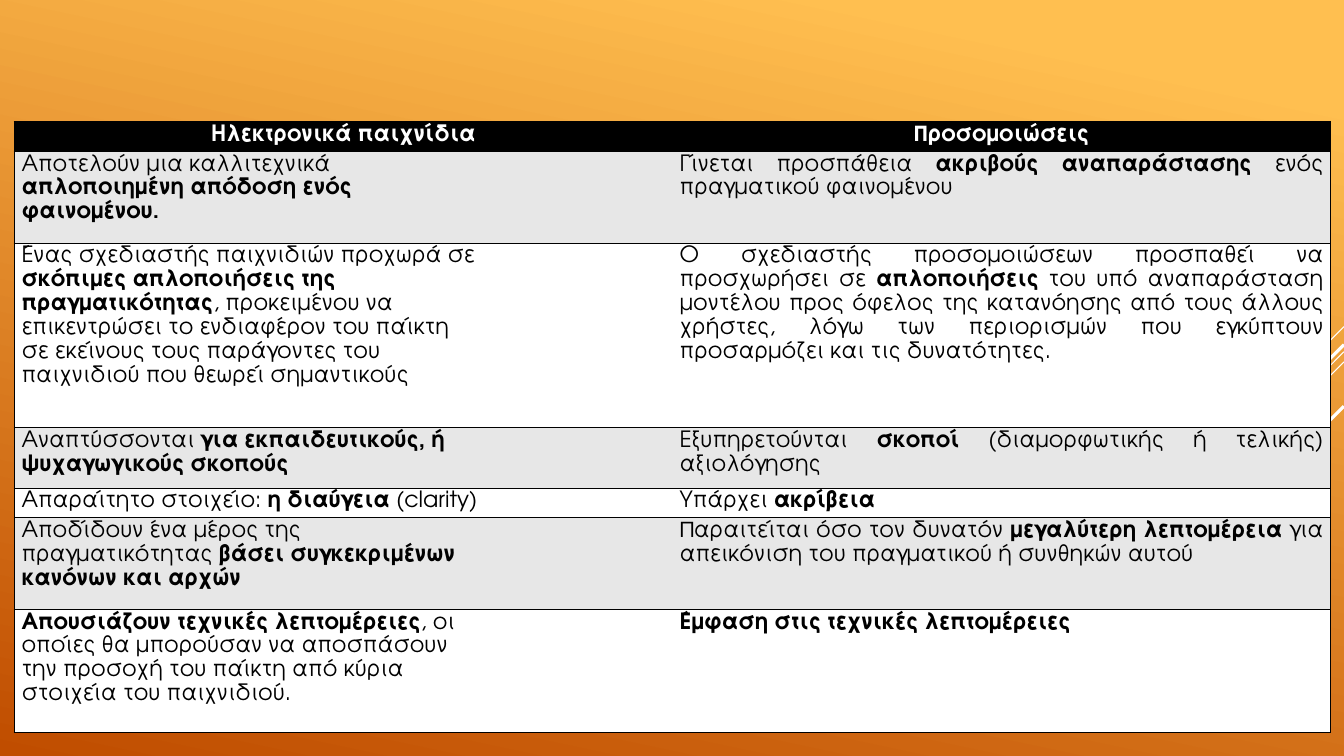
from lxml.etree import SubElement
from pptx import Presentation
from pptx.dml.color import RGBColor
from pptx.enum.shapes import MSO_CONNECTOR
from pptx.enum.text import PP_ALIGN
from pptx.oxml import parse_xml
from pptx.oxml.ns import nsdecls, qn
from pptx.util import Pt

COLORS = {"black": "000000", "white": "FFFFFF", "gray": "E7E7E7",
          "amber": "FFBF50", "rust": "C04D00"}

# Start height at the right edge, diagonal reach, line width
RAYS = [(233.28, 72, 0.75), (251.28, 234.72, 0.75), (258.48, 149, 0.75),
        (246.24, 137.52, 2.25), (290.16, 100, 2.25)]

HEIGHTS = [21, 65.6, 131.8, 43.2, 21, 65.6, 87.8]

# Each row: games, simulations; ** switches bold, a new line starts a paragraph
ROWS = [
    ("**Ηλεκτρονικά παιχνίδια**", "**Προσομοιώσεις**"),
    ("Αποτελούν μια καλλιτεχνικά\n**απλοποιημένη απόδοση ενός**\n**φαινομένου.**",
     "Γίνεται προσπάθεια **ακριβούς αναπαράστασης **ενός πραγματικού φαινομένου"),
    ("Ένας σχεδιαστής παιχνιδιών προχωρά σε\n**σκόπιμες απλοποιήσεις της**\n"
     "**πραγματικότητας**, προκειμένου να\nεπικεντρώσει το ενδιαφέρον του παίκτη\n"
     "σε εκείνους τους παράγοντες του\nπαιχνιδιού που θεωρεί σημαντικούς",
     "Ο σχεδιαστής προσομοιώσεων προσπαθεί να προσχωρήσει σε **απλοποιήσεις** "
     "του υπό αναπαράσταση μοντέλου προς όφελος της κατανόησης από τους άλλους "
     "χρήστες, λόγω των περιορισμών που εγκύπτουν προσαρμόζει και τις δυνατότητες."),
    ("Αναπτύσσονται **για εκπαιδευτικούς, ή**\n**ψυχαγωγικούς σκοπούς**",
     "Εξυπηρετούνται **σκοποί** (διαμορφωτικής ή τελικής) αξιολόγησης"),
    ("Απαραίτητο στοιχείο: **η διαύγεια **(clarity)", "Υπάρχει **ακρίβεια**"),
    ("Αποδίδουν ένα μέρος της\nπραγματικότητας **βάσει συγκεκριμένων**\n"
     "**κανόνων και αρχών**",
     "Παραιτείται όσο τον δυνατόν **μεγαλύτερη λεπτομέρεια **για απεικόνιση "
     "του πραγματικού ή συνθηκών αυτού"),
    ("**Απουσιάζουν τεχνικές λεπτομέρειες**, οι\nοποίες θα μπορούσαν να αποσπάσουν\n"
     "την προσοχή του παίκτη από κύρια\nστοιχεία του παιχνιδιού.",
     "**Έμφαση στις τεχνικές λεπτομέρειες**"),
]


def rgb(name):
    return RGBColor.from_string(COLORS[name])


class Board:
    font = "TeX Gyre Adventor"
    size = 16

    def __init__(self, slide):
        self.slide = slide

    def back(self, stops, angle):
        """Fill the background with a gradient; angle is clockwise."""
        fill = self.slide.background.fill
        fill.gradient()
        fill.gradient_angle = 360 - angle
        for stop, (place, color) in zip(fill.gradient_stops, stops):
            stop.position = place
            stop.color.rgb = rgb(color)

    def line(self, start, end, color, width):
        line = self.slide.shapes.add_connector(
            MSO_CONNECTOR.STRAIGHT, *map(Pt, start + end))
        line.line.color.rgb = rgb(color)
        line.line.width = Pt(width)
        SubElement(line._element.spPr, qn("a:effectLst"))

    def text(self, frame, text, color, align):
        frame.text = text.replace("**", "")
        for para, words in zip(frame.paragraphs, text.split("\n")):
            para.text = ""
            para.alignment = align
            para.line_spacing = 1.15
            for i, part in enumerate(words.split("**")):
                if part:
                    run = para.add_run()
                    run.text = part
                    run.font.name = self.font
                    run.font.size = Pt(self.size)
                    run.font.bold = i % 2 == 1
                    run.font.color.rgb = rgb(color)

    def edge(self, cell, sides):
        """Draw the given sides of a cell in black and clear the others."""
        props = cell._tc.get_or_add_tcPr()
        for i, side in enumerate("LRTB"):
            paint = (f'<a:solidFill><a:srgbClr val="{COLORS["black"]}"/></a:solidFill>'
                     if side in sides else "<a:noFill/>")
            props.insert(i, parse_xml(
                f'<a:ln{side} {nsdecls("a")} w="{Pt(1)}">{paint}</a:ln{side}>'))

    def table(self, rows, heights, left, top, width):
        count = len(rows[0])
        frame = self.slide.shapes.add_table(
            len(rows), count, Pt(left), Pt(top), Pt(width), Pt(sum(heights)))
        table = frame.table
        table.first_row = table.horz_banding = False
        for col in table.columns:
            col.width = Pt(width / count)
        for r, (texts, height) in enumerate(zip(rows, heights)):
            table.rows[r].height = Pt(height)
            fill = "black" if r == 0 else "gray" if r % 2 else "white"
            color = "white" if r == 0 else "black"
            align = PP_ALIGN.CENTER if r == 0 else PP_ALIGN.JUSTIFY
            for c, text in enumerate(texts):
                cell = table.cell(r, c)
                cell.margin_left = cell.margin_right = Pt(5.2)
                cell.margin_top = cell.margin_bottom = 0
                cell.fill.solid()
                cell.fill.fore_color.rgb = rgb(fill)
                self.edge(cell, "TB" + "LR"[c])
                self.text(cell.text_frame, text, color, align)


def main():
    deck = Presentation()
    deck.slide_width, deck.slide_height = Pt(960), Pt(540)
    board = Board(deck.slides.add_slide(deck.slide_layouts[6]))
    board.back([(0.1, "amber"), (1, "rust")], 102)
    for top, reach, width in RAYS:
        board.line((960, top), (960 - reach, top + reach), "white", width)
    board.table(ROWS, HEIGHTS, 10.2, 87.2, 940.2)
    deck.save("out.pptx")


if __name__ == "__main__":
    main()
